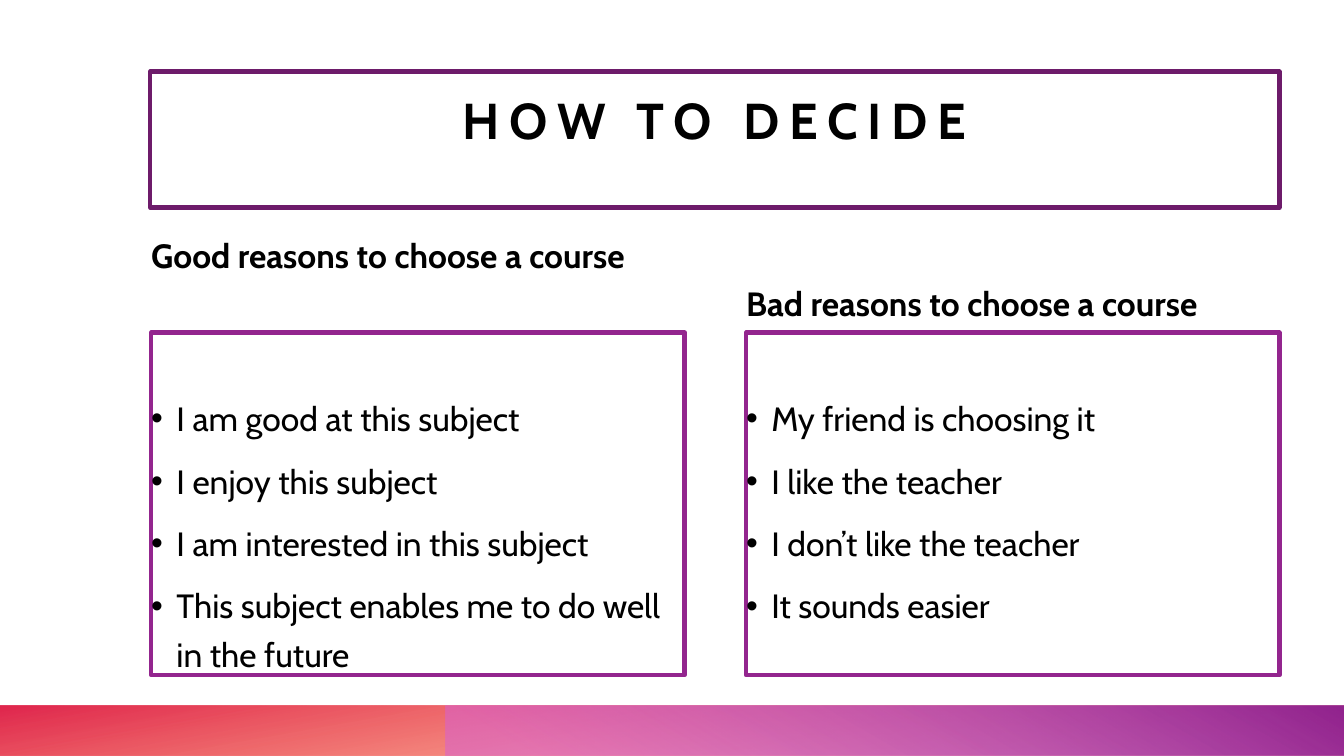
from dataclasses import dataclass

from lxml import etree
from pptx import Presentation
from pptx.dml.color import RGBColor
from pptx.enum.shapes import MSO_SHAPE
from pptx.enum.text import MSO_ANCHOR, PP_ALIGN
from pptx.oxml.ns import qn
from pptx.util import Pt

RECT = MSO_SHAPE.RECTANGLE
TOP, BOTTOM = MSO_ANCHOR.TOP, MSO_ANCHOR.BOTTOM
LEFT, CENTER = PP_ALIGN.LEFT, PP_ALIGN.CENTER

PX = 9144  # EMU in one px, 100 px to the inch
FONT = "Cabin"
COLORS = {
    "text": "000000",
    "frame": "93258E",
    "title": "6D1B6A",
    "orange": "FE4A00",
    "red": "DA002F",
    "pink": "D861D4",
    "purple": "92248E",
}
INDENT = 25
COL_W = 529


@dataclass
class Stop:
    pos: int
    color: str
    alpha: int


@dataclass
class Band:
    left: int
    width: int
    angle: int
    turn: int
    stops: list[Stop]


@dataclass
class Block:
    box: tuple[int, int, int, int]
    lines: list[str]
    size: int = 24
    bold: bool = False
    anchor: MSO_ANCHOR = TOP
    align: PP_ALIGN = LEFT
    space: float = 1.2
    before: int = 10
    above: int = 0
    below: int = 0
    frame: str = ""
    bullet: bool = False
    track: int = 0


@dataclass
class Column:
    left: int
    head: str
    lift: int
    items: list[str]


BANDS = [
    Band(0, 1333, 100, 180, [Stop(14, "orange", 28), Stop(100, "red", 85)]),
    Band(442, 891, 240, 0, [Stop(9, "pink", 55), Stop(99, "purple", 100)]),
]
COLUMNS = [
    Column(150, "Good reasons to choose a course", 48, [
        "I am good at this subject",
        "I enjoy this subject",
        "I am interested in this subject",
        "This subject enables me to do well in the future",
    ]),
    Column(740, "Bad reasons to choose a course", 0, [
        "My friend is choosing it",
        "I like the teacher",
        "I don’t like the teacher",
        "It sounds easier",
    ]),
]


def apply(target, values: dict) -> None:
    for name, value in values.items():
        setattr(target, name, value)


def rgb(name: str) -> RGBColor:
    return RGBColor.from_string(COLORS[name])


def draw_band(slide, band: Band) -> None:
    shape = slide.shapes.add_shape(
        RECT, band.left * PX, 700 * PX, band.width * PX, 50 * PX)
    shape.shadow.inherit = False
    shape.rotation = band.turn
    shape.line.fill.background()
    props = shape._element.spPr
    props.find(qn("a:xfrm")).set("flipH", "1")
    # Gradient with its own opacity at each stop
    grad = etree.Element(qn("a:gradFill"), rotWithShape="1")
    stops = etree.SubElement(grad, qn("a:gsLst"))
    for stop in band.stops:
        mark = etree.SubElement(stops, qn("a:gs"), pos=str(stop.pos * 1000))
        tint = etree.SubElement(mark, qn("a:srgbClr"), val=COLORS[stop.color])
        etree.SubElement(tint, qn("a:alpha"), val=str(stop.alpha * 1000))
    etree.SubElement(grad, qn("a:lin"), ang=str(band.angle * 60000), scaled="0")
    props.find(qn("a:prstGeom")).addnext(grad)


def add_bullet(para) -> None:
    props = para._p.get_or_add_pPr()
    props.set("marL", str(INDENT * PX))
    props.set("indent", str(-INDENT * PX))
    etree.SubElement(props, qn("a:buFont"), typeface="Arial")
    etree.SubElement(props, qn("a:buChar"), char="•")


def draw_block(slide, block: Block) -> None:
    shape = slide.shapes.add_textbox(*(n * PX for n in block.box))
    if block.frame:
        shape.line.color.rgb = rgb(block.frame)
        shape.line.width = Pt(3)
    frame = shape.text_frame
    apply(frame, {
        "word_wrap": True,
        "vertical_anchor": block.anchor,
        "margin_left": 0,
        "margin_right": 0,
        "margin_top": block.above * PX,
        "margin_bottom": block.below * PX,
    })
    for i, line in enumerate(block.lines):
        para = frame.add_paragraph() if i else frame.paragraphs[0]
        apply(para, {
            "alignment": block.align,
            "line_spacing": block.space,
            "space_before": Pt(block.before),
        })
        if block.bullet:
            add_bullet(para)
        run = para.add_run()
        run.text = line
        apply(run.font, {"name": FONT, "size": Pt(block.size), "bold": block.bold})
        run.font.color.rgb = rgb("text")
        if block.track:
            run._r.get_or_add_rPr().set("spc", str(block.track * 100))


def main() -> None:
    deck = Presentation()
    apply(deck, {"slide_width": 1333 * PX, "slide_height": 750 * PX})
    slide = deck.slides.add_slide(deck.slide_layouts[6])

    # Bottom bands
    for band in BANDS:
        draw_band(slide, band)

    # Reason columns
    for col in COLUMNS:
        draw_block(slide, Block((col.left, 231, COL_W, 90), [col.head], bold=True,
                                anchor=BOTTOM, below=col.lift))
        draw_block(slide, Block((col.left, 330, COL_W, 340), col.items,
                                above=57, frame="frame", bullet=True))

    # Title
    draw_block(slide, Block((149, 71, 1120, 135), ["HOW TO DECIDE"], size=36,
                            bold=True, anchor=BOTTOM, align=CENTER, space=1.0,
                            before=0, below=58, frame="title", track=7))

    deck.save("out.pptx")


if __name__ == "__main__":
    main()
